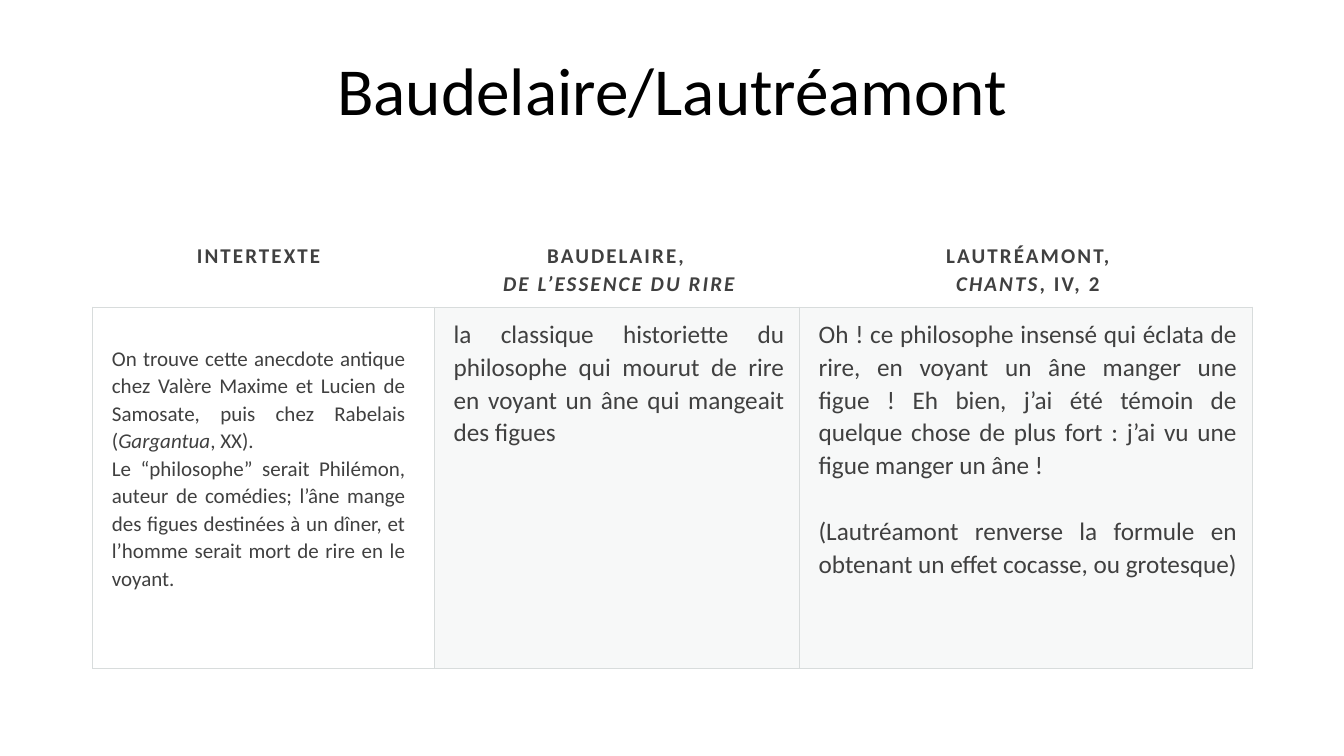
from lxml import etree
from pptx import Presentation
from pptx.dml.color import RGBColor
from pptx.enum.text import MSO_ANCHOR, MSO_AUTO_SIZE, PP_ALIGN
from pptx.oxml.ns import qn
from pptx.util import Inches, Pt

BLACK = RGBColor(0x00, 0x00, 0x00)
GREY = RGBColor(0x40, 0x40, 0x40)
RULE = RGBColor(0xD8, 0xDC, 0xDC)
TINT = RGBColor(0xD8, 0xDE, 0xDC)
CENTER, JUSTIFY = PP_ALIGN.CENTER, PP_ALIGN.JUSTIFY
TOP, BOTTOM = MSO_ANCHOR.TOP, MSO_ANCHOR.BOTTOM
NO_FIT = MSO_AUTO_SIZE.NONE
TITLE_ONLY = 5

HEADINGS = [
    [[("INTERTEXTE", False)]],
    [[("BAUDELAIRE, ", False)], [("DE L’ESSENCE DU RIRE", True)]],
    [[("LAUTRÉAMONT,", False)], [("CHANTS", True), (", IV, 2", False)]],
]
INTERTEXT = [
    [("On trouve cette anecdote antique chez Valère Maxime et Lucien de Samosate, "
      "puis chez Rabelais (", False), ("Gargantua", True), (", XX).", False)],
    [("Le “philosophe” serait Philémon, auteur de comédies; l’âne mange des figues "
      "destinées à un dîner, et l’homme serait mort de rire en le voyant.", False)],
]
BAUDELAIRE = [[("la classique historiette du philosophe qui mourut de rire en voyant "
                "un âne qui mangeait des figues", False)]]
LAUTREAMONT = [
    [("Oh ! ce philosophe insensé qui éclata de rire, en voyant un âne manger une "
      "figue ! Eh bien, j’ai été témoin de quelque chose de plus fort : j’ai vu une "
      "figue manger un âne !", False)],
    [("(Lautréamont renverse la formule en obtenant un effet cocasse, ou grotesque)",
      False)],
]


def write(frame, paragraphs, size, color=GREY, font="Calibri", align=JUSTIFY,
          bold=False, tracking=0, leading=1.07, gap=0):
    """Fill a text frame with paragraphs, each a list of (text, italic) runs."""
    frame.word_wrap = True
    for index, runs in enumerate(paragraphs):
        paragraph = frame.add_paragraph() if index else frame.paragraphs[0]
        paragraph.alignment = align
        paragraph.line_spacing = leading
        paragraph.space_before = Pt(gap if index else 0)
        for text, italic in runs:
            run = paragraph.add_run()
            run.text = text
            run.font.name, run.font.size = font, Pt(size)
            run.font.bold, run.font.italic = bold, italic
            run.font.color.rgb = color
            if tracking:
                run.font._element.set("spc", str(int(tracking * 100)))


class ComparisonSlide:
    def __init__(self, deck):
        self.slide = deck.slides.add_slide(deck.slide_layouts[TITLE_ONLY])

    def title(self, text, left, top, width, height):
        heading = self.slide.shapes.title
        heading.left, heading.top = Inches(left), Inches(top)
        heading.width, heading.height = Inches(width), Inches(height)
        frame = heading.text_frame
        frame.auto_size = NO_FIT
        frame.vertical_anchor = BOTTOM
        write(frame, [[(text, False)]], 48, color=BLACK, align=CENTER, leading=0.9)

    def table(self, left, top, columns, rows):
        table = self.slide.shapes.add_table(
            len(rows), len(columns), Inches(left), Inches(top),
            Inches(sum(columns)), Inches(sum(rows))).table
        table.first_row = table.horz_banding = False
        for column, width in zip(table.columns, columns):
            column.width = Inches(width)
        for row, height in zip(table.rows, rows):
            row.height = Inches(height)
        return table

    def cell(self, cell, paragraphs, size, right=0.15, top=0.1, tinted=False,
             borders="LRTB", **text_format):
        cell.margin_left, cell.margin_right = Inches(0.19), Inches(right)
        cell.margin_top, cell.margin_bottom = Inches(top), Inches(0.1)
        cell.vertical_anchor = TOP
        write(cell.text_frame, paragraphs, size, **text_format)
        if tinted:
            cell.fill.solid()
            cell.fill.fore_color.rgb = TINT
            tint = next(cell._tc.tcPr.iter(qn("a:srgbClr")))
            etree.SubElement(tint, qn("a:alpha"), val="20000")
        else:
            cell.fill.background()
        self.borders(cell, borders)

    def borders(self, cell, visible):
        """Rule the visible sides and clear the others."""
        for index, side in enumerate("LRTB"):
            line = etree.Element(qn(f"a:ln{side}"), w=str(Pt(0.75)))
            if side in visible:
                fill = etree.SubElement(line, qn("a:solidFill"))
                etree.SubElement(fill, qn("a:srgbClr"), val=str(RULE))
            else:
                etree.SubElement(line, qn("a:noFill"))
            cell._tc.tcPr.insert(index, line)


def main():
    deck = Presentation()
    deck.slide_width, deck.slide_height = Inches(13.33), Inches(7.5)
    page = ComparisonSlide(deck)
    page.title("Baudelaire/Lautréamont", 0.92, 0.32, 11.5, 1.02)

    table = page.table(0.92, 2.3, [3.39, 3.62, 4.49], [0.74, 3.59])
    for column, heading in enumerate(HEADINGS):
        page.cell(table.cell(0, column), heading, 15, right=0.15 if column else 0.29,
                  borders="B", align=CENTER, bold=True, tracking=1.5)
    page.cell(table.cell(1, 0), INTERTEXT, 15, right=0.29, top=0.37)
    page.cell(table.cell(1, 1), BAUDELAIRE, 18, tinted=True)
    page.cell(table.cell(1, 2), LAUTREAMONT, 18, tinted=True, gap=23.5)
    deck.save("out.pptx")


if __name__ == "__main__":
    main()
